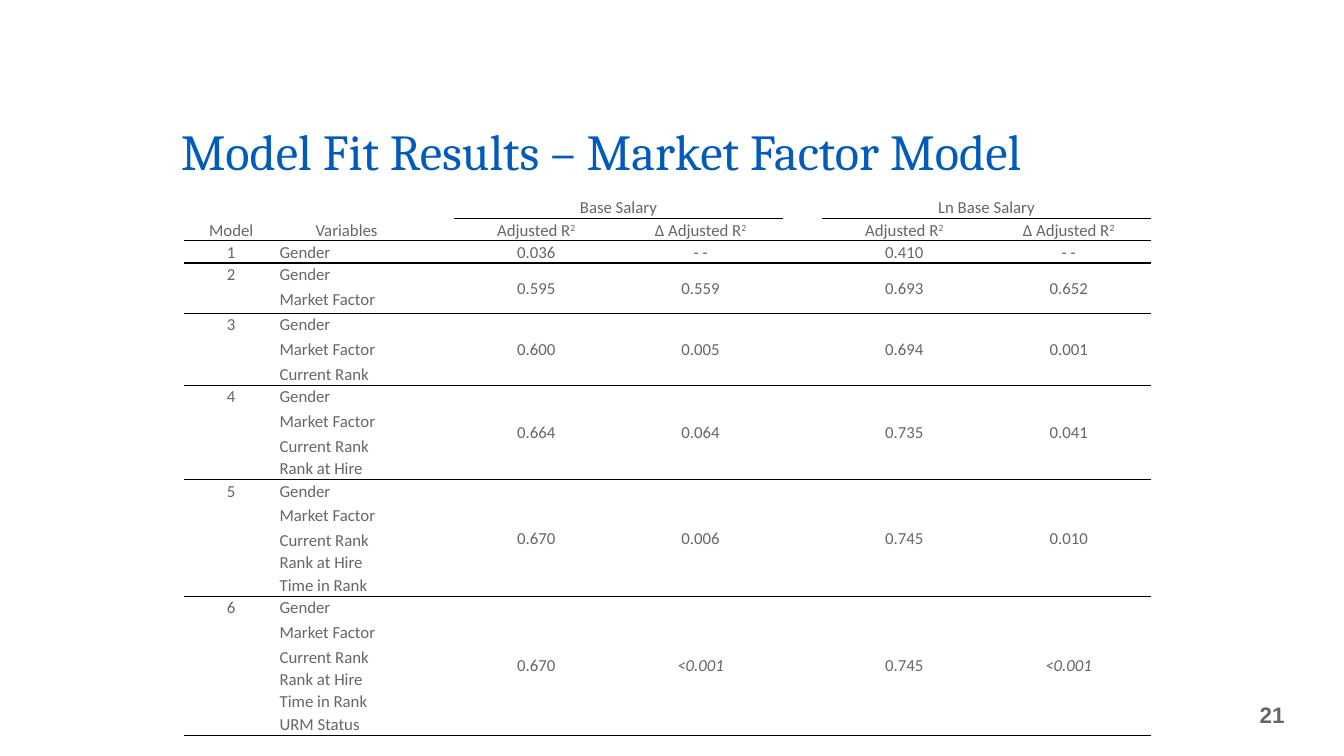
"""Build the slide of market factor model fit results."""
import pptx
import pptx.dml.color
import pptx.enum.text
import pptx.oxml
import pptx.oxml.ns
import pptx.util
from lxml import etree

RGB = pptx.dml.color.RGBColor.from_string
ALIGN = pptx.enum.text.PP_ALIGN
ANCHOR = pptx.enum.text.MSO_ANCHOR
qn = pptx.oxml.ns.qn

THEME = {
    "title": ("Cambria", 36, "005BBB"),
    "table": ("Calibri", 12, "666666"),
    "number": ("Arial", 16, "666666"),
    "rule": "000000",
}
NO_STYLE = "{2D5ABB26-0587-4C30-8999-92F81FD0307C}"

prs = pptx.Presentation()
prs.slide_width = pptx.util.Inches(13.33)
prs.slide_height = pptx.util.Inches(7.5)
W, H = prs.slide_width / 100, prs.slide_height / 100
s = prs.slides.add_slide(prs.slide_layouts[5])


def box(left, top, width, height):
    return int(left * W), int(top * H), int(width * W), int(height * H)


def add_run(p, text, style):
    r = p.add_run()
    r.text = text
    r.font.name, size, color = THEME[style]
    r.font.size = pptx.util.Pt(size)
    r.font.color.rgb = RGB(color)
    return r


title = s.shapes.title
title.left, title.top, title.width, title.height = box(12.7, 14.07, 86.27, 10.4)
tf = title.text_frame
tf.word_wrap = True
tf.auto_size = pptx.enum.text.MSO_AUTO_SIZE.NONE
tf.vertical_anchor = ANCHOR.BOTTOM
p = tf.paragraphs[0]
p.alignment = ALIGN.LEFT
p.line_spacing = 0.8
add_run(p, "Model Fit Results – Market Factor Model", "title")

variables = ["Gender", "Market Factor", "Current Rank", "Rank at Hire", "Time in Rank", "URM Status"]
fits = [
    ("0.036", "- -", "0.410", "- -"),
    ("0.595", "0.559", "0.693", "0.652"),
    ("0.600", "0.005", "0.694", "0.001"),
    ("0.664", "0.064", "0.735", "0.041"),
    ("0.670", "0.006", "0.745", "0.010"),
    ("0.670", "<0.001", "0.745", "<0.001"),
]
fit_cols = [3, 4, 6, 7]
texts = {(0, 3): "Base Salary", (0, 6): "Ln Base Salary", (1, 0): "Model", (1, 1): "Variables"}
texts.update({(1, c): h for c, h in zip(fit_cols, ["Adjusted R^2", "Δ Adjusted R^2"] * 2)})

col_widths = [7.05, 10.13, 2.93, 12.23, 12.23, 2.93, 12.23, 12.23]
row_heights = [2.96, 2.96]
ruled = {0: fit_cols, 1: range(8)}
merges = [(0, 3, 0, 4), (0, 6, 0, 7)]
for model, values in enumerate(fits, 1):
    first = len(row_heights)
    last = first + model - 1
    texts[first, 0] = str(model)
    for i, name in enumerate(variables[:model]):
        texts[first + i, 1] = name
        row_heights.append((3.73 if model == 2 else 3.6) if i == 1 else 2.96)
    for c, value in zip(fit_cols, values):
        texts[first, c] = value
        if model > 1:
            merges.append((first, c, last, c))
    ruled[last] = range(8)

frame = s.shapes.add_table(
    len(row_heights), len(col_widths), *box(13.68, 25.93, sum(col_widths), sum(row_heights)))
table = frame.table
table.first_row = table.horz_banding = False
table._tbl.tblPr.find(qn("a:tableStyleId")).text = NO_STYLE
for column, width in zip(table.columns, col_widths):
    column.width = int(width * W)
for row, height in zip(table.rows, row_heights):
    row.height = int(height * H)
for top, left, bottom, right in merges:
    table.cell(top, left).merge(table.cell(bottom, right))

for r_index in range(len(row_heights)):
    for c_index in range(len(col_widths)):
        cell = table.cell(r_index, c_index)
        cell.margin_left = cell.margin_right = cell.margin_top = pptx.util.Inches(0.01)
        cell.margin_bottom = 0
        cell.vertical_anchor = ANCHOR.BOTTOM if r_index < 2 else ANCHOR.MIDDLE
        p = cell.text_frame.paragraphs[0]
        p.alignment = ALIGN.LEFT if c_index == 1 and r_index > 1 else ALIGN.CENTER
        base, _, power = texts.get((r_index, c_index), "").partition("^")
        if base:
            r = add_run(p, base, "table")
            r.font.italic = base.startswith("<")
        else:
            etree.SubElement(p._p, qn("a:endParaRPr"), sz=str(THEME["table"][1] * 100))
        if power:
            r = add_run(p, power, "table")
            r._r.get_or_add_rPr().set("baseline", "30000")

        end = r_index + (cell.span_height if cell.is_merge_origin else 1) - 1
        tcPr = cell._tc.get_or_add_tcPr()
        for edge, line_row in (("a:lnT", r_index - 1), ("a:lnB", end)):
            ln = etree.SubElement(tcPr, qn(edge), w=str(pptx.util.Pt(1)))
            if c_index in ruled.get(line_row, ()):
                fill = etree.SubElement(ln, qn("a:solidFill"))
                etree.SubElement(fill, qn("a:srgbClr"), val=THEME["rule"])
            else:
                etree.SubElement(ln, qn("a:noFill"))
        cell.fill.background()

sp = s.shapes.add_textbox(*box(90.62, 90.67, 5.93, 7.73))
tf = sp.text_frame
tf.word_wrap = True
tf.vertical_anchor = ANCHOR.MIDDLE
tf.margin_left = tf.margin_right = pptx.util.Inches(0.13)
tf.margin_top = tf.margin_bottom = pptx.util.Inches(0.07)
p = tf.paragraphs[0]
p.alignment = ALIGN.RIGHT
add_run(p, "21", "number").font.bold = True

prs.save("out.pptx")
